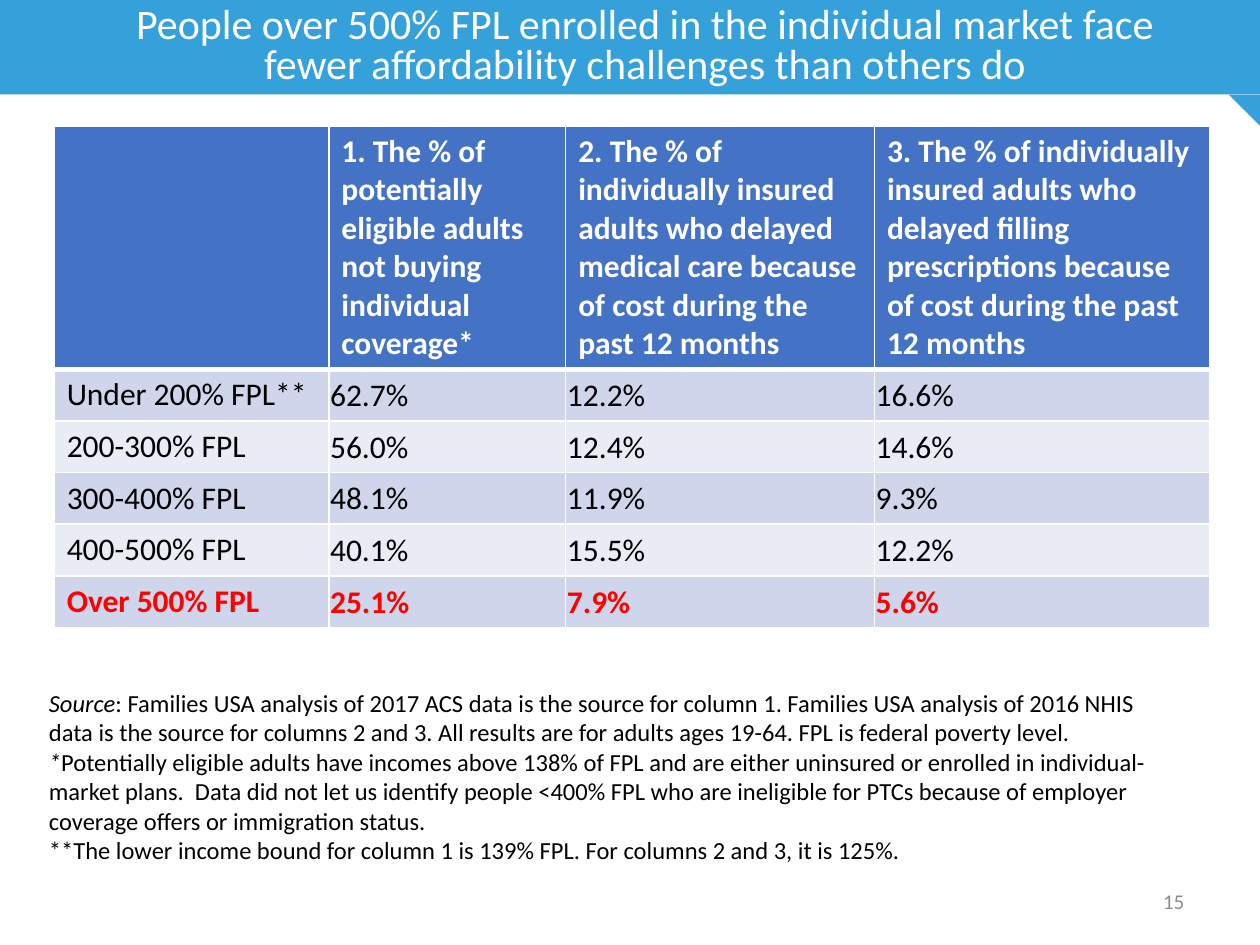
from lxml import etree
from pptx import Presentation
from pptx.dml.color import RGBColor
from pptx.enum import shapes, text
from pptx.oxml.ns import qn
from pptx.util import Inches, Pt

TITLE = ("People over 500% FPL enrolled in the individual market face "
         "fewer affordability challenges than others do")
HEADS = [
    "",
    "1. The % of potentially eligible adults not buying individual coverage*",
    "2. The % of individually insured adults who delayed medical care "
    "because of cost during the past 12 months",
    "3. The % of individually insured adults who delayed filling "
    "prescriptions because of cost during the past 12 months",
]
ROWS = [
    ["Under 200% FPL**", "62.7%", "12.2%", "16.6%"],
    ["200-300% FPL", "56.0%", "12.4%", "14.6%"],
    ["300-400% FPL", "48.1%", "11.9%", "9.3%"],
    ["400-500% FPL", "40.1%", "15.5%", "12.2%"],
    ["Over 500% FPL", "25.1%", "7.9%", "5.6%"],
]
# Each note is an italic lead and the plain text after it.
NOTES = [
    ("Source", ": Families USA analysis of 2017 ACS data is the source for "
     "column 1. Families USA analysis of 2016 NHIS data is the source for "
     "columns 2 and 3. All results are for adults ages 19-64. FPL is federal "
     "poverty level."),
    ("*", "Potentially eligible adults have incomes above 138% of FPL and are "
     "either uninsured or enrolled in individual-market plans.  Data did not "
     "let us identify people <400% FPL who are ineligible for PTCs because of "
     "employer coverage offers or immigration status."),
    ("", "**The lower income bound for column 1 is 139% FPL. For columns 2 "
     "and 3, it is 125%."),
]
WIDTHS = [2.18, 1.88, 2.45, 2.66]
HEAD_H, ROW_H = 1.88, 0.41
BLUE, WHITE, BLACK, RED = "34A1DA", "FFFFFF", "000000", "FF0000"
HEAD, BANDS = "4472C4", ["CFD5EA", "E9EBF5"]


def paint(fill, color):
    fill.solid()
    fill.fore_color.rgb = RGBColor.from_string(color)


def style(para, size, color, bold=False):
    font = para.font
    font.name, font.size, font.bold = "Calibri", Pt(size), bold
    font.color.rgb = RGBColor.from_string(color)


def add_block(slide, kind, *box):
    block = slide.shapes.add_shape(kind, *map(Inches, box))
    block.shadow.inherit = False
    paint(block.fill, BLUE)
    block.line.fill.background()
    return block


def add_box(slide, *box):
    frame = slide.shapes.add_textbox(*map(Inches, box)).text_frame
    frame.word_wrap = True
    return frame


def add_edges(cell, bottom):
    """Draw white borders, which must come before the cell's fill."""
    props = cell._tc.get_or_add_tcPr()
    for side, width in [("L", 1), ("R", 1), ("T", 1), ("B", bottom)]:
        line = etree.SubElement(props, qn("a:ln" + side), w=str(Pt(width)))
        fill = etree.SubElement(line, qn("a:solidFill"))
        etree.SubElement(fill, qn("a:srgbClr"), val=WHITE)


def add_title(slide):
    title = slide.shapes.title
    title.left, title.top, title.width, title.height = map(
        Inches, (0.53, 0, 8.93, 0.75))
    frame = title.text_frame
    frame.text = TITLE
    frame.word_wrap = True
    frame.auto_size = text.MSO_AUTO_SIZE.NONE
    frame.vertical_anchor = text.MSO_ANCHOR.MIDDLE
    para = frame.paragraphs[0]
    para._p.get_or_add_pPr().set("marL", str(Inches(0.25)))
    para.alignment = text.PP_ALIGN.CENTER
    para.line_spacing = 0.8
    style(para, 24, WHITE)


def add_grid(slide):
    data = [HEADS] + ROWS
    high = HEAD_H + ROW_H * len(ROWS)
    table = slide.shapes.add_table(
        len(data), len(WIDTHS), Inches(0.43), Inches(1),
        Inches(sum(WIDTHS)), Inches(high)).table
    for col, width in zip(table.columns, WIDTHS):
        col.width = Inches(width)
    for r, row in enumerate(data):
        head, last = r == 0, r == len(ROWS)
        table.rows[r].height = Inches(HEAD_H if head else ROW_H)
        color = WHITE if head else RED if last else BLACK
        for c, words in enumerate(row):
            cell = table.cell(r, c)
            cell.text = words
            add_edges(cell, 3 if head else 1)
            paint(cell.fill, HEAD if head else BANDS[(r - 1) % 2])
            style(cell.text_frame.paragraphs[0], 18, color, head or last)
            if not head:
                cell.vertical_anchor = text.MSO_ANCHOR.MIDDLE
                if c:
                    cell.margin_left = cell.margin_right = Inches(0.01)
                    cell.margin_top, cell.margin_bottom = Inches(0.01), 0


def add_notes(slide):
    frame = add_box(slide, 0.29, 5.41, 9.17, 1.51)
    for i, (lead, rest) in enumerate(NOTES):
        para = frame.add_paragraph() if i else frame.paragraphs[0]
        style(para, 14, BLACK)
        if lead:
            run = para.add_run()
            run.text = lead
            run.font.italic = True
        para.add_run().text = rest


def add_number(slide):
    frame = add_box(slide, 9.03, 6.95, 0.57, 0.4)
    frame.text = "15"
    frame.vertical_anchor = text.MSO_ANCHOR.MIDDLE
    para = frame.paragraphs[0]
    para.alignment = text.PP_ALIGN.CENTER
    style(para, 12, "8C8C8C")


def main():
    deck = Presentation()
    deck.slide_width, deck.slide_height = Inches(10), Inches(7.5)
    slide = deck.slides.add_slide(deck.slide_layouts[5])
    kinds = shapes.MSO_SHAPE
    band = add_block(slide, kinds.RECTANGLE, 0, 0, 10, 0.75)
    fold = add_block(slide, kinds.RIGHT_TRIANGLE, 9.75, 0.75, 0.25, 0.25)
    fold.rotation = 180
    # Keep the band and its fold behind the title.
    for block in (fold, band):
        slide.shapes._spTree.insert(2, block._element)
    add_title(slide)
    add_grid(slide)
    add_number(slide)
    add_notes(slide)
    deck.save("out.pptx")


if __name__ == "__main__":
    main()
